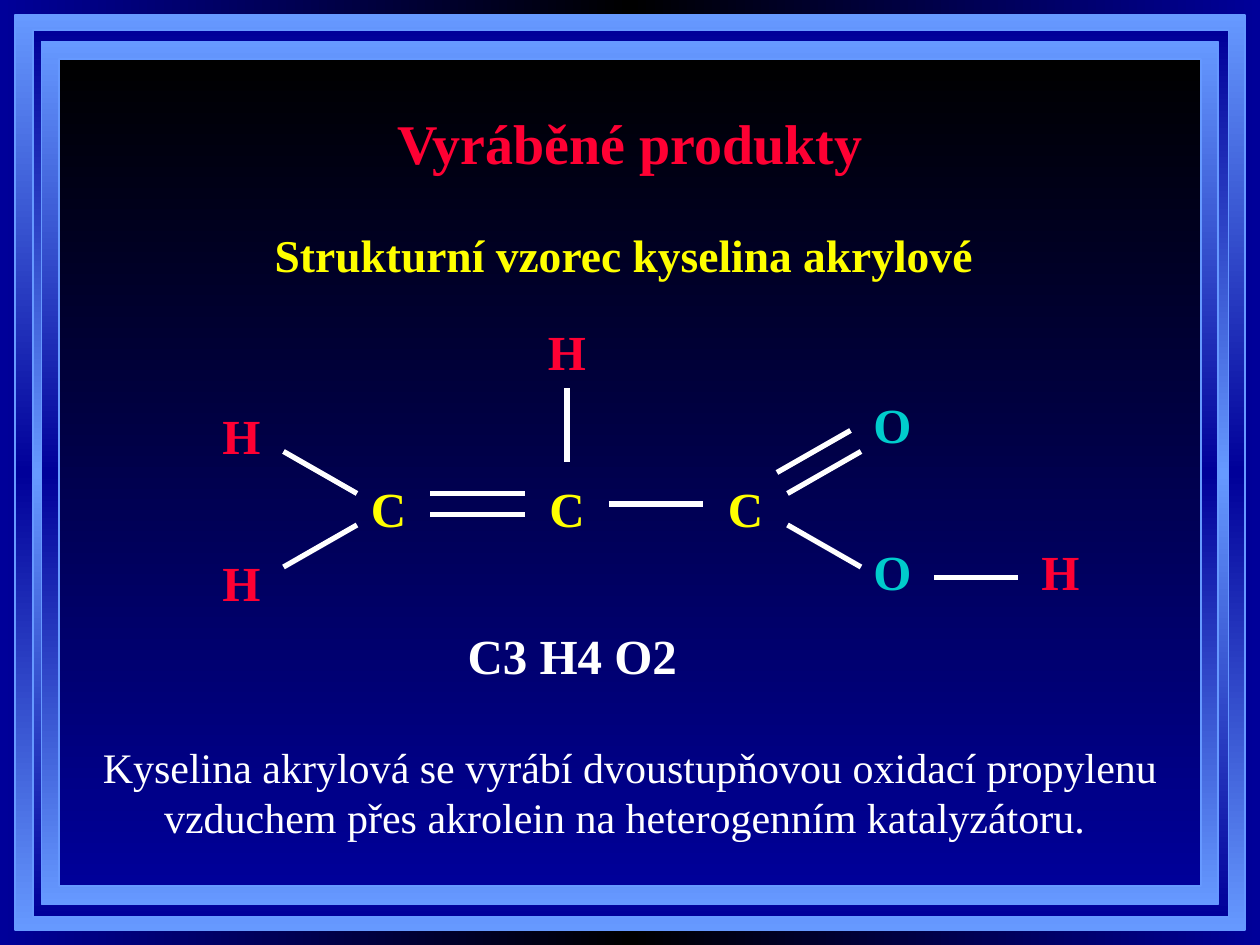
import pptx
import pptx.util
import pptx.dml.color
import pptx.enum.shapes
import pptx.enum.text
import pptx.oxml
import pptx.oxml.ns
from lxml import etree

# Theme
THEME = dict(
    font="Times New Roman", red="FF0033", yellow="FFFF00", teal="00CCCC",
    white="FFFFFF", navy="000099", blue="6699FF", black="000000",
    title=32, subtitle=26, formula=28, body=24, edge=1, bond=3,
)

# Content; places are in grid units, 12 to the inch
GRID = 12
TITLE = ("Vyráběné produkty", (6, 6, 108, 15))
SUBTITLE = ("Strukturní vzorec kyselina akrylové ", (8, 21, 104, 8))
BODY = ("Kyselina akrylová se vyrábí dvoustupňovou oxidací propylenu "
        "vzduchem přes akrolein na heterogenním katalyzátoru. ", (8, 70, 104, 10.8))
FORMULA = ([("C", 0), ("3 ", -25), ("H", 0), ("4 ", -25), ("O", 0), ("2", -25)],
           (42, 59, 25, 6.84))
ATOM_SIZE = (6, 6.84)
ATOM_COLORS = {"C": "yellow", "O": "teal", "H": "red"}
ATOMS = [
    ("C", 34, 45), ("C", 68, 45), ("C", 51, 45), ("O", 82, 51), ("H", 98, 51),
    ("O", 82, 37), ("H", 51, 30), ("H", 20, 38), ("H", 20, 52),
]
BONDS = [
    (41, 47, 50, 47), (41, 49, 50, 49), (58, 48, 67, 48), (74, 45, 81, 41),
    (75, 47, 82, 43), (27, 43, 34, 47), (27, 54, 34, 50), (75, 50, 82, 54),
    (89, 55, 97, 55), (54, 44, 54, 37),
]

# Nested frame panels: box in inches, gradient colours from top to bottom
FRAMES = [
    ((0.12, 0.12, 9.76, 7.26), ("blue", "navy", "blue")),
    ((0.26, 0.24, 9.49, 7.04), ("navy", "blue", "navy")),
    ((0.33, 0.33, 9.34, 6.85), ("blue", "navy", "blue")),
    ((0.47, 0.47, 9.06, 6.56), ("black", "navy")),
]


def grid(*units):
    return [pptx.util.Inches(u / GRID) for u in units]


def color(name):
    return pptx.dml.color.RGBColor.from_string(THEME[name])


def paint(fill, element, names, angle):
    """Fill with evenly spaced gradient stops."""
    fill.gradient()
    old = element.xpath(".//a:gradFill")[0]
    stops = "".join(
        f'<a:gs pos="{100000 * i // (len(names) - 1)}"><a:srgbClr val="{THEME[n]}"/></a:gs>'
        for i, n in enumerate(names))
    new = pptx.oxml.parse_xml(
        f'<a:gradFill {pptx.oxml.ns.nsdecls("a")} rotWithShape="1"><a:gsLst>{stops}</a:gsLst>'
        f'<a:lin ang="{angle * 60000}" scaled="0"/></a:gradFill>')
    old.getparent().replace(old, new)


def write(shape, text, size, fill, bold=True, grow=False, anchor="TOP"):
    """Write a string, or a list of (string, baseline percent) runs."""
    tf = shape.text_frame
    tf.word_wrap = True
    sizing = pptx.enum.text.MSO_AUTO_SIZE
    tf.auto_size = sizing.SHAPE_TO_FIT_TEXT if grow else sizing.NONE
    tf.vertical_anchor = pptx.enum.text.MSO_ANCHOR[anchor]
    p = tf.paragraphs[0]
    p.alignment = pptx.enum.text.PP_ALIGN.CENTER
    p.space_before = pptx.util.Pt(0)
    if grow:  # spacing as a share of the line
        before = shape.element.xpath(".//a:spcBef")[0]
        before.remove(before[0])
        etree.SubElement(before, pptx.oxml.ns.qn("a:spcPct"), val="50000")
    for part, baseline in [(text, 0)] if isinstance(text, str) else text:
        r = p.add_run()
        r.text = part
        r.font.name = THEME["font"]
        r.font.size = pptx.util.Pt(THEME[size])
        r.font.bold = bold
        r.font.color.rgb = color(fill)
        if baseline:
            r.font.subscript = True  # sets the default -25 % baseline


def place(shape, box):
    shape.left, shape.top, shape.width, shape.height = grid(*box)


def main():
    prs = pptx.Presentation()
    prs.slide_width, prs.slide_height = grid(120, 90)
    s = prs.slides.add_slide(prs.slide_layouts[0])
    paint(s.background.fill, s.element, ("navy", "black", "navy"), 0)

    # Frame, behind the placeholders
    frame = s.shapes.add_group_shape()
    for box, names in FRAMES:
        sp = frame.shapes.add_shape(pptx.enum.shapes.MSO_SHAPE.RECTANGLE,
                                    *map(pptx.util.Inches, box))
        sp.shadow.inherit = False
        paint(sp.fill, sp.element, names, 90)
        sp.line.color.rgb = color("blue")
        sp.line.width = pptx.util.Pt(THEME["edge"])
    s.shapes.element.insert(2, frame.element)

    # Title and subtitle
    title, subtitle = s.placeholders
    place(title, TITLE[1])
    write(title, TITLE[0], "title", "red", anchor="MIDDLE")
    place(subtitle, SUBTITLE[1])
    write(subtitle, SUBTITLE[0], "subtitle", "yellow")

    # Molecule: atoms, then bonds
    molecule = s.shapes.add_group_shape()
    for symbol, x, y in ATOMS:
        atom = molecule.shapes.add_textbox(*grid(x, y, *ATOM_SIZE))
        write(atom, symbol, "formula", ATOM_COLORS[symbol], grow=True)
    for ends in BONDS:
        bond = molecule.shapes.add_connector(
            pptx.enum.shapes.MSO_CONNECTOR.STRAIGHT, *grid(*ends))
        bond.line.color.rgb = color("white")
        bond.line.width = pptx.util.Pt(THEME["bond"])
        etree.SubElement(bond.element.spPr, pptx.oxml.ns.qn("a:effectLst"))

    # Summary formula and description
    for (text, box), size, bold in ((FORMULA, "formula", True), (BODY, "body", False)):
        write(s.shapes.add_textbox(*grid(*box)), text, size, "white", bold=bold, grow=True)

    prs.save("out.pptx")


if __name__ == "__main__":
    main()
